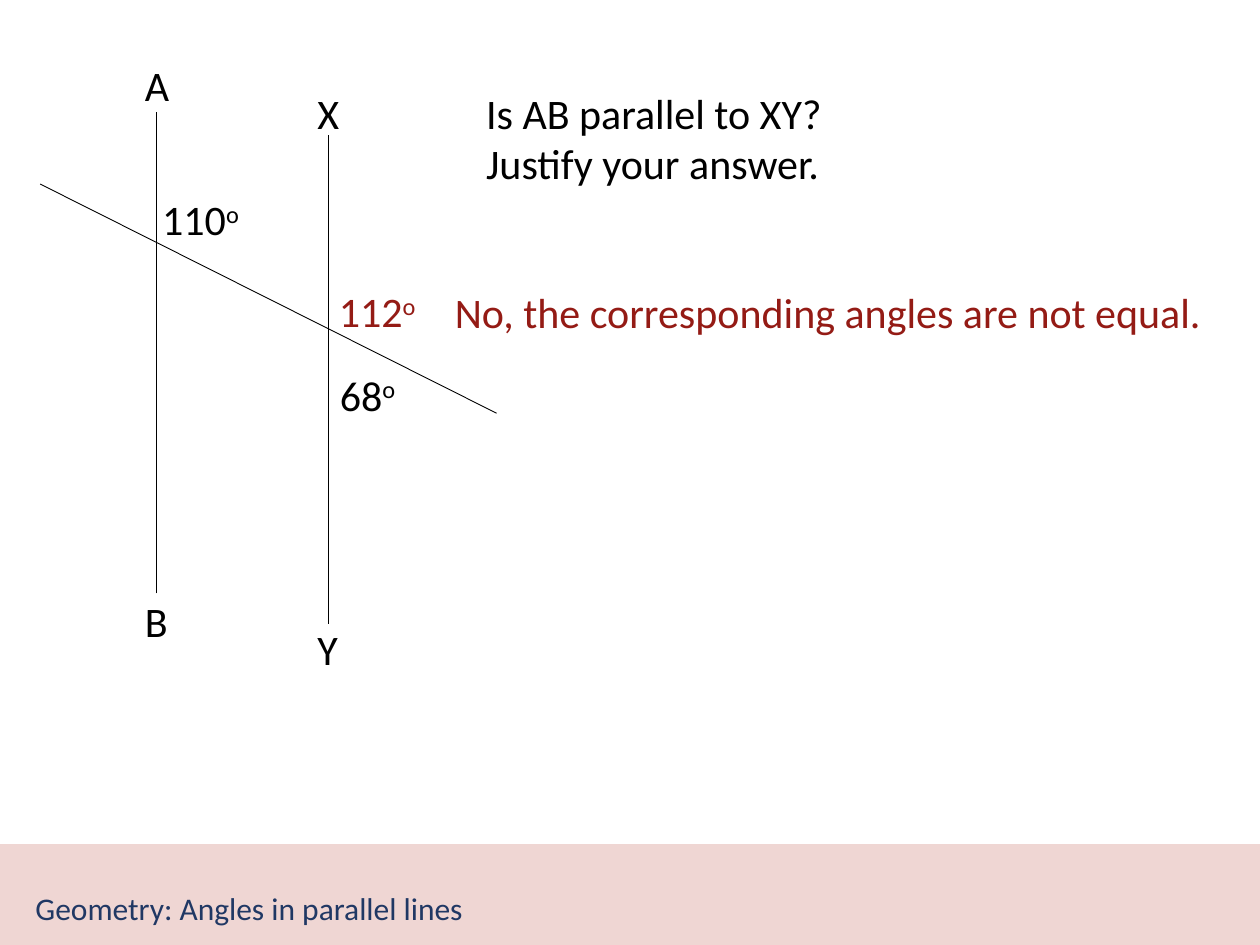
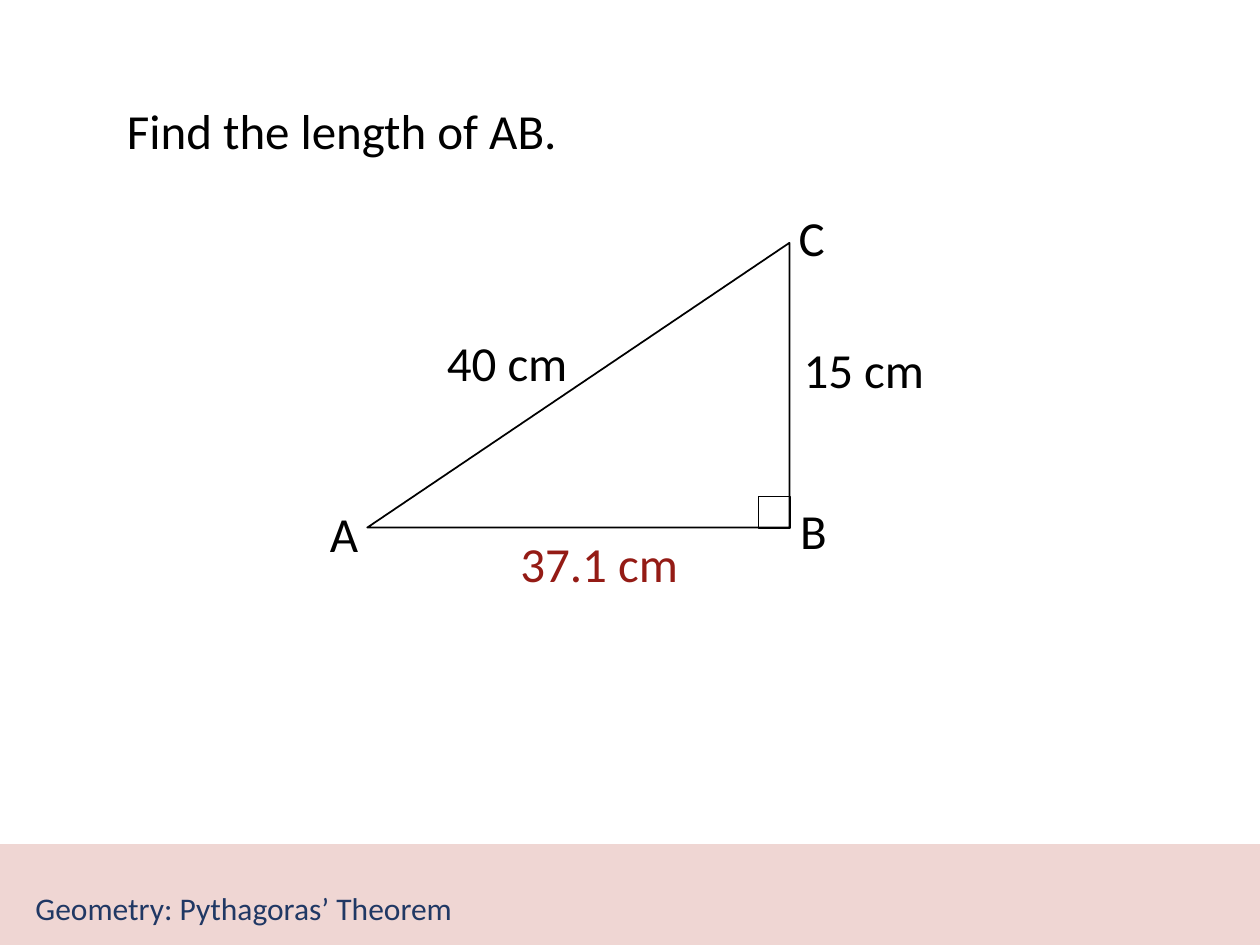
"""Build two geometry question slides that share a tinted footer band."""
from lxml.etree import SubElement
from pptx import Presentation
from pptx.dml.color import RGBColor
from pptx.enum.shapes import MSO_CONNECTOR, MSO_SHAPE
from pptx.enum.text import MSO_ANCHOR, MSO_AUTO_SIZE, PP_ALIGN
from pptx.oxml.ns import qn
from pptx.util import Cm, Pt

COLOURS = {"band": "EFD6D3", "topic": "203864", "ink": "000000", "answer": "941B15"}
FONT = "Calibri"
TITLE_ONLY = 5


def colour(name):
    return RGBColor.from_string(COLOURS[name])


def write(text_frame, text, size=24, ink="ink", superscript=""):
    for index, line in enumerate(text.split("\n")):
        paragraph = text_frame.paragraphs[0] if index == 0 else text_frame.add_paragraph()
        paragraph.alignment = PP_ALIGN.LEFT
        for part in filter(None, (line, superscript)):
            run = paragraph.add_run()
            run.text = part
            run.font.name = FONT
            run.font.size = Pt(size)
            run.font.color.rgb = colour(ink)
        if superscript:
            run.font._element.set("baseline", "30000")


def add_label(slide, text, left, top, width, height=1.27, wrap=False, **text_format):
    box = slide.shapes.add_textbox(Cm(left), Cm(top), Cm(width), Cm(height))
    box.text_frame.word_wrap = wrap
    box.text_frame.auto_size = MSO_AUTO_SIZE.SHAPE_TO_FIT_TEXT
    write(box.text_frame, text, **text_format)


def add_outline(slide, preset, left, top, width, height, fill=None, line="ink"):
    shape = slide.shapes.add_shape(preset, Cm(left), Cm(top), Cm(width), Cm(height))
    shape.shadow.inherit = False
    if fill:
        shape.fill.solid()
        shape.fill.fore_color.rgb = colour(fill)
    else:
        shape.fill.background()
    shape.line.color.rgb = colour(line)
    shape.line.width = Pt(1)
    return shape


def add_line(slide, start_x, start_y, end_x, end_y):
    line = slide.shapes.add_connector(
        MSO_CONNECTOR.STRAIGHT, Cm(start_x), Cm(start_y), Cm(end_x), Cm(end_y))
    line.line.color.rgb = colour("ink")
    line.line.width = Pt(0.5)
    SubElement(line.element.spPr, qn("a:effectLst"))


def add_topic_slide(presentation, topic):
    slide = presentation.slides.add_slide(presentation.slide_layouts[TITLE_ONLY])
    write(slide.shapes.title.text_frame, topic, size=18, ink="topic")
    return slide


def style_layout(slide):
    """Move the layout's title into a footer band that every slide inherits."""
    title = slide.slide_layout.placeholders[0]
    title.left, title.top, title.width, title.height = Cm(0.46), Cm(17.86), Cm(22.02), Cm(0.89)
    title.text_frame.vertical_anchor = MSO_ANCHOR.MIDDLE
    band = add_outline(slide, MSO_SHAPE.RECTANGLE, 0, 17.04, 25.4, 2.01, "band", "band")
    title.element.addprevious(band.element)


def draw_parallel_lines(slide):
    add_line(slide, 3.15, 11.96, 3.15, 2.26)
    add_line(slide, 6.63, 12.57, 6.63, 2.72)
    add_line(slide, 10.01, 8.33, 0.81, 3.71)
    for name, left, top in (("A", 2.67, 1.07), ("X", 6.15, 1.63),
                            ("B", 2.67, 11.89), ("Y", 6.15, 12.45)):
        add_label(slide, name, left, top, 0.97, wrap=True)
    for angle, left, top, width, ink in (("110", 3.02, 3.78, 2.11, "ink"),
                                         ("68", 6.6, 7.32, 1.68, "ink"),
                                         ("112", 6.58, 5.64, 2.11, "answer")):
        add_label(slide, angle, left, top, width, ink=ink, superscript="o")
    add_label(slide, "Is AB parallel to XY?\nJustify your answer.",
              9.55, 1.63, 12.22, 2.31, wrap=True)
    add_label(slide, "No, the corresponding angles are not equal.",
              8.92, 5.66, 15.7, ink="answer")


def draw_right_triangle(slide):
    triangle = add_outline(slide, MSO_SHAPE.ISOSCELES_TRIANGLE, 8.79, 3.51, 5.74, 8.51)
    triangle.adjustments[0] = 0
    triangle.rotation = 270
    add_outline(slide, MSO_SHAPE.RECTANGLE, 15.29, 10.01, 0.63, 0.63)
    for text, left, top, width, ink in (
            ("Find the length of AB.", 2.31, 1.9, 9.27, "ink"),
            ("15 cm", 15.95, 6.71, 2.97, "ink"),
            ("40 cm", 8.76, 6.58, 2.97, "ink"),
            ("37.1 cm", 10.24, 10.64, 3.73, "answer"),
            ("A", 6.4, 10.03, 1.09, "ink"),
            ("B", 15.88, 9.96, 1.07, "ink"),
            ("C", 15.85, 4.06, 1.07, "ink")):
        add_label(slide, text, left, top, width, 1.45, size=28, ink=ink)


def main():
    presentation = Presentation()
    presentation.slide_width, presentation.slide_height = Cm(25.4), Cm(19.05)
    parallel_slide = add_topic_slide(presentation, "Geometry: Angles in parallel lines")
    style_layout(parallel_slide)
    draw_parallel_lines(parallel_slide)
    draw_right_triangle(add_topic_slide(presentation, "Geometry: Pythagoras’ Theorem"))
    presentation.save("out.pptx")


if __name__ == "__main__":
    main()
